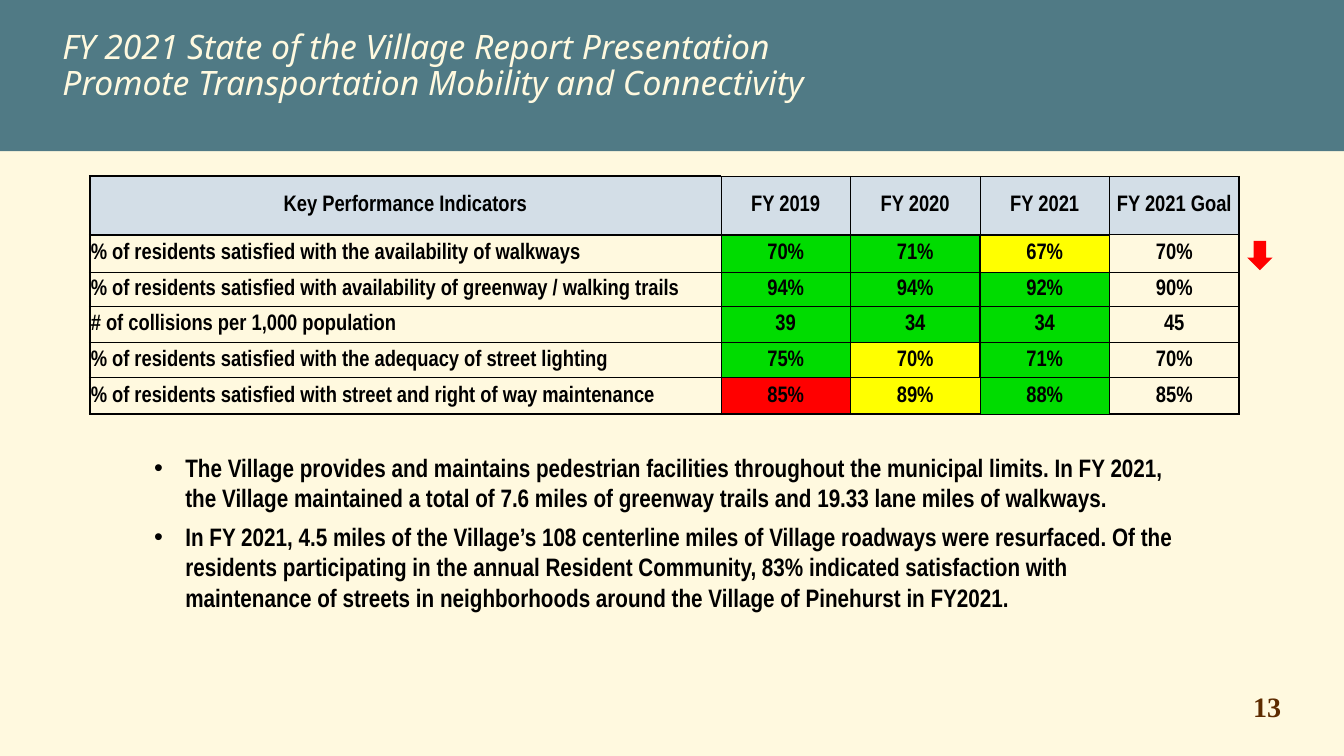
from dataclasses import dataclass
from typing import Any

from lxml import etree
from pptx import Presentation
from pptx.dml.color import RGBColor
from pptx.enum.shapes import MSO_SHAPE
from pptx.enum.text import MSO_ANCHOR, MSO_AUTO_SIZE, PP_ALIGN
from pptx.oxml.ns import qn
from pptx.util import Inches, Pt

RECTANGLE, DOWN_ARROW = MSO_SHAPE.RECTANGLE, MSO_SHAPE.DOWN_ARROW
TOP, MIDDLE = MSO_ANCHOR.TOP, MSO_ANCHOR.MIDDLE
LEFT, CENTER = PP_ALIGN.LEFT, PP_ALIGN.CENTER
NO_AUTOFIT = MSO_AUTO_SIZE.NONE

WIDTH, HEIGHT = Inches(13.33), Inches(7.5)
TITLE_ONLY = 5
COLORS = {
    "cream": "FFF9DF", "teal": "507A85", "brown": "5D2B00", "black": "000000",
    "header": "D3DEE7", "green": "00DC00", "yellow": "FFFF00", "red": "FF0000",
}
NARROW = {"font": "Arial Narrow", "bold": True}


@dataclass(frozen=True)
class Area:
    """Left, top, width and height as percentages of the slide."""
    left: float
    top: float
    width: float
    height: float

    def lengths(self) -> tuple[int, int, int, int]:
        return across(self.left), down(self.top), across(self.width), down(self.height)


@dataclass(frozen=True)
class Indicator:
    label: str
    values: tuple[str, str, str, str]
    ratings: tuple[str, str, str]
    height: float


HEADINGS = ("Key Performance Indicators", "FY 2019", "FY 2020", "FY 2021", "FY 2021 Goal")
HEADER_HEIGHT = 7.73
INDICATORS = (
    Indicator("% of residents satisfied with the availability of walkways",
              ("70%", "71%", "67%", "70%"), ("green", "green", "yellow"), 4.93),
    Indicator("% of residents satisfied with availability of greenway / walking trails",
              ("94%", "94%", "92%", "90%"), ("green", "green", "green"), 4.53),
    Indicator("# of collisions per 1,000 population",
              ("39", "34", "34", "45"), ("green", "green", "green"), 4.8),
    Indicator("% of residents satisfied with the adequacy of street lighting",
              ("75%", "70%", "71%", "70%"), ("green", "yellow", "green"), 4.67),
    Indicator("% of residents satisfied with street and right of way maintenance",
              ("85%", "89%", "88%", "85%"), ("red", "yellow", "green"), 4.8),
)
COLUMN_WIDTHS = (46.96, 9.64, 9.64, 9.64, 9.64)
TABLE_AREA = Area(6.68, 23.33, sum(COLUMN_WIDTHS),
                  HEADER_HEIGHT + sum(item.height for item in INDICATORS))
HEADER_VERTICALS = (1.5, 0.5, 0.5, 0.5, 0.5, 1)
BODY_VERTICALS = (1.5, 0.5, 1.5, 1.5, 1, 1)
LAST_VERTICALS = (1.5, 0.5, 1.5, 0.5, 1, 1)
TOP_EDGE = (1.5, 1, 1, 1, 1)
HEADER_EDGE = (1.5, 1.5, 1.5, 1.5, 1)
INNER_EDGE = (0.5,) * 5
BOTTOM_EDGE = (1.5, 1.5, 1.5, 0.5, 1)

TITLE_LINES = (
    "FY 2021 State of the Village Report Presentation",
    "Promote Transportation Mobility and Connectivity",
)
BULLETS = (
    "The Village provides and maintains pedestrian facilities throughout the municipal limits. "
    "In FY 2021, the Village maintained a total of 7.6 miles of greenway trails and 19.33 lane "
    "miles of walkways.",
    "In FY 2021, 4.5 miles of the Village’s 108 centerline miles of Village roadways were "
    "resurfaced. Of the residents participating in the annual Resident Community, 83% indicated "
    "satisfaction with maintenance of streets in neighborhoods around the Village of Pinehurst "
    "in FY2021.",
)


def across(percent: float) -> int:
    return round(WIDTH * percent / 100)


def down(percent: float) -> int:
    return round(HEIGHT * percent / 100)


def color(name: str) -> RGBColor:
    return RGBColor.from_string(COLORS[name])


def write(frame: Any, *lines: str, font: str, size: float, ink: str = "black",
          bold: bool = False, italic: bool = False, align: Any = LEFT,
          spacing: float = 1, after: float = 0, bullet: bool = False) -> None:
    for index, line in enumerate(lines):
        para = frame.add_paragraph() if index else frame.paragraphs[0]
        para.alignment, para.line_spacing = align, spacing
        para.space_before, para.space_after = Pt(0), Pt(after)
        span = para.add_run()
        span.text = line
        span.font.name, span.font.size = font, Pt(size)
        span.font.bold, span.font.italic = bold, italic
        span.font.color.rgb = color(ink)
        if bullet:
            properties = para._p.get_or_add_pPr()
            properties.set("marL", str(Inches(0.31)))
            properties.set("indent", str(-Inches(0.31)))
            etree.SubElement(properties, qn("a:buFont"), typeface="Arial")
            etree.SubElement(properties, qn("a:buChar"), char="•")


def add_text(page: Any, area: Area, *lines: str, **style: Any) -> None:
    box = page.shapes.add_textbox(*area.lengths())
    box.text_frame.word_wrap = True
    write(box.text_frame, *lines, **style)


def add_solid(page: Any, kind: Any, area: Area, fill: str) -> None:
    shape = page.shapes.add_shape(kind, *area.lengths())
    shape.shadow.inherit = False
    shape.fill.solid()
    shape.fill.fore_color.rgb = color(fill)
    shape.line.fill.background()


def add_title(page: Any, area: Area) -> None:
    title = page.shapes.title
    title.element.getparent().append(title.element)
    title.left, title.top, title.width, title.height = area.lengths()
    frame = title.text_frame
    frame.word_wrap, frame.auto_size, frame.vertical_anchor = True, NO_AUTOFIT, TOP
    write(frame, *TITLE_LINES, font="Noto Sans", size=24, ink="cream", italic=True, spacing=0.9)


def format_cell(cell: Any, text: str, align: Any, fill: str | None,
                edges: dict[str, float]) -> None:
    cell.margin_left = cell.margin_right = cell.margin_top = Inches(0.01)
    cell.margin_bottom = 0
    cell.vertical_anchor = MIDDLE
    write(cell.text_frame, text, size=16, align=align, **NARROW)
    properties = cell._tc.get_or_add_tcPr()
    for side, points in edges.items():
        line = etree.SubElement(properties, qn(f"a:ln{side}"), w=str(Pt(points)))
        paint = etree.SubElement(line, qn("a:solidFill"))
        etree.SubElement(paint, qn("a:srgbClr"), val=COLORS["black"])
    if fill:
        cell.fill.solid()
        cell.fill.fore_color.rgb = color(fill)
    else:
        cell.fill.background()


def add_indicators(page: Any) -> None:
    rows = [(HEADINGS, ("header",) * 5, HEADER_HEIGHT)]
    rows += [((item.label, *item.values), (None, *item.ratings, None), item.height)
             for item in INDICATORS]
    inner = len(INDICATORS) - 1
    horizontals = [TOP_EDGE, HEADER_EDGE, *[INNER_EDGE] * inner, BOTTOM_EDGE]
    verticals = [HEADER_VERTICALS, *[BODY_VERTICALS] * inner, LAST_VERTICALS]
    table = page.shapes.add_table(len(rows), len(HEADINGS), *TABLE_AREA.lengths()).table
    table.first_row = table.horz_banding = False
    for column, width in zip(table.columns, COLUMN_WIDTHS):
        column.width = across(width)
    for row, (texts, fills, height) in enumerate(rows):
        table.rows[row].height = down(height)
        for column, (text, fill) in enumerate(zip(texts, fills)):
            edges = {"L": verticals[row][column], "R": verticals[row][column + 1],
                     "T": horizontals[row][column], "B": horizontals[row + 1][column]}
            align = LEFT if row and not column else CENTER
            format_cell(table.cell(row, column), text, align, fill, edges)


def main() -> None:
    deck = Presentation()
    deck.slide_width, deck.slide_height = WIDTH, HEIGHT
    page = deck.slides.add_slide(deck.slide_layouts[TITLE_ONLY])
    page.background.fill.solid()
    page.background.fill.fore_color.rgb = color("cream")
    add_solid(page, RECTANGLE, Area(0, 0, 100, 20), "teal")
    add_text(page, Area(92.5, 90.53, 5.18, 5.87), "13",
             font="Times New Roman", size=20, ink="brown", bold=True)
    add_title(page, Area(3.9, 3.33, 91.45, 12.13))
    add_text(page, Area(10.73, 59.2, 77.42, 22.67), *BULLETS,
             size=18, after=6, bullet=True, **NARROW)
    add_solid(page, DOWN_ARROW, Area(92.8, 31.87, 1.88, 3.87), "red")
    add_indicators(page)
    deck.save("out.pptx")


if __name__ == "__main__":
    main()
